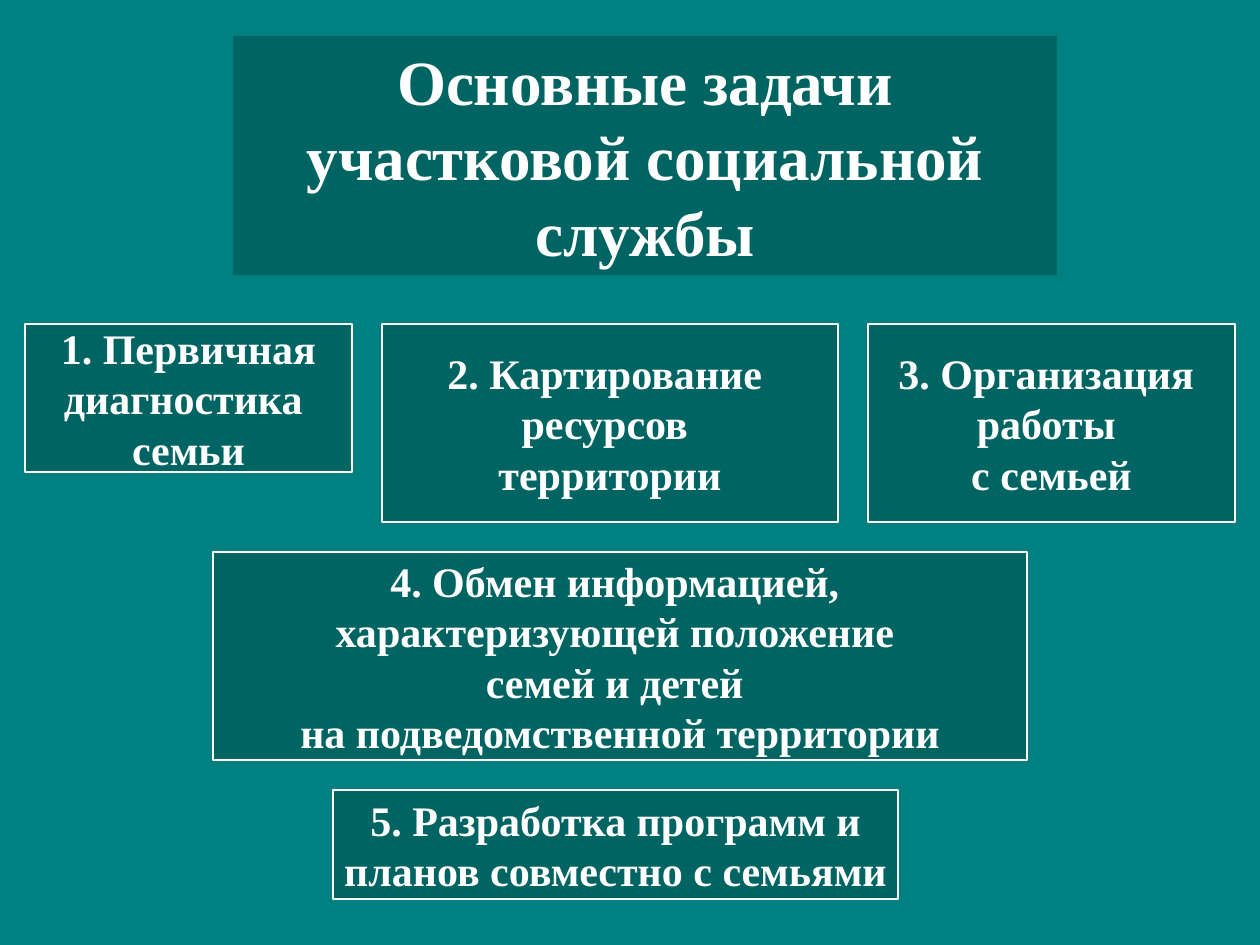
from dataclasses import dataclass

from pptx import Presentation
from pptx.dml.color import RGBColor
from pptx.enum.shapes import MSO_SHAPE
from pptx.enum.text import MSO_ANCHOR, PP_ALIGN
from pptx.util import Emu, Pt

RECTANGLE = MSO_SHAPE.RECTANGLE
TOP, MIDDLE = MSO_ANCHOR.TOP, MSO_ANCHOR.MIDDLE
CENTER = PP_ALIGN.CENTER

PX_PER_INCH = 126
FONT = "Times New Roman"
COLORS = {"background": "008080", "panel": "006462", "light": "FFFFFF"}
ROW_TOP = 324


@dataclass(frozen=True)
class Panel:
    left: int
    top: int
    width: int
    height: int
    text: str
    size: int = 24
    outlined: bool = True
    wrap: bool = False
    anchor: MSO_ANCHOR = MIDDLE


HEADING = Panel(
    233, 36, 824, 239, "Основные задачи участковой социальной службы",
    size=36, outlined=False, wrap=True, anchor=TOP,
)
TASKS = [
    Panel(25, ROW_TOP, 327, 148, "1. Первичная\nдиагностика \nсемьи"),
    Panel(382, ROW_TOP, 456, 198, "2. Картирование \nресурсов \nтерритории"),
    Panel(868, ROW_TOP, 367, 198, "3. Организация \nработы \nс семьей"),
    Panel(
        213, 552, 814, 208,
        "4. Обмен информацией, \nхарактеризующей положение \n"
        "семей и детей \nна подведомственной территории",
    ),
    Panel(333, 790, 565, 109, "5. Разработка программ и\nпланов совместно с семьями"),
]


def px(length: int) -> Emu:
    return Emu(round(length * 914400 / PX_PER_INCH))


def color(name: str) -> RGBColor:
    return RGBColor.from_string(COLORS[name])


def draw_panel(page, panel: Panel) -> None:
    box = page.shapes.add_shape(
        RECTANGLE, px(panel.left), px(panel.top), px(panel.width), px(panel.height)
    )
    box.shadow.inherit = False
    box.fill.solid()
    box.fill.fore_color.rgb = color("panel")
    if panel.outlined:
        box.line.color.rgb = color("light")
        box.line.width = Pt(0.75)
    else:
        box.line.fill.background()

    frame = box.text_frame
    frame.text = panel.text
    frame.word_wrap = panel.wrap
    frame.vertical_anchor = panel.anchor
    for para in frame.paragraphs:
        para.alignment = CENTER
        for span in para.runs:
            span.font.name = FONT
            span.font.size = Pt(panel.size)
            span.font.bold = True
            span.font.color.rgb = color("light")


def main() -> None:
    deck = Presentation()
    deck.slide_width, deck.slide_height = px(1260), px(945)
    page = deck.slides.add_slide(deck.slide_layouts[6])
    page.background.fill.solid()
    page.background.fill.fore_color.rgb = color("background")
    for panel in [HEADING, *TASKS]:
        draw_panel(page, panel)
    deck.save("out.pptx")


if __name__ == "__main__":
    main()
